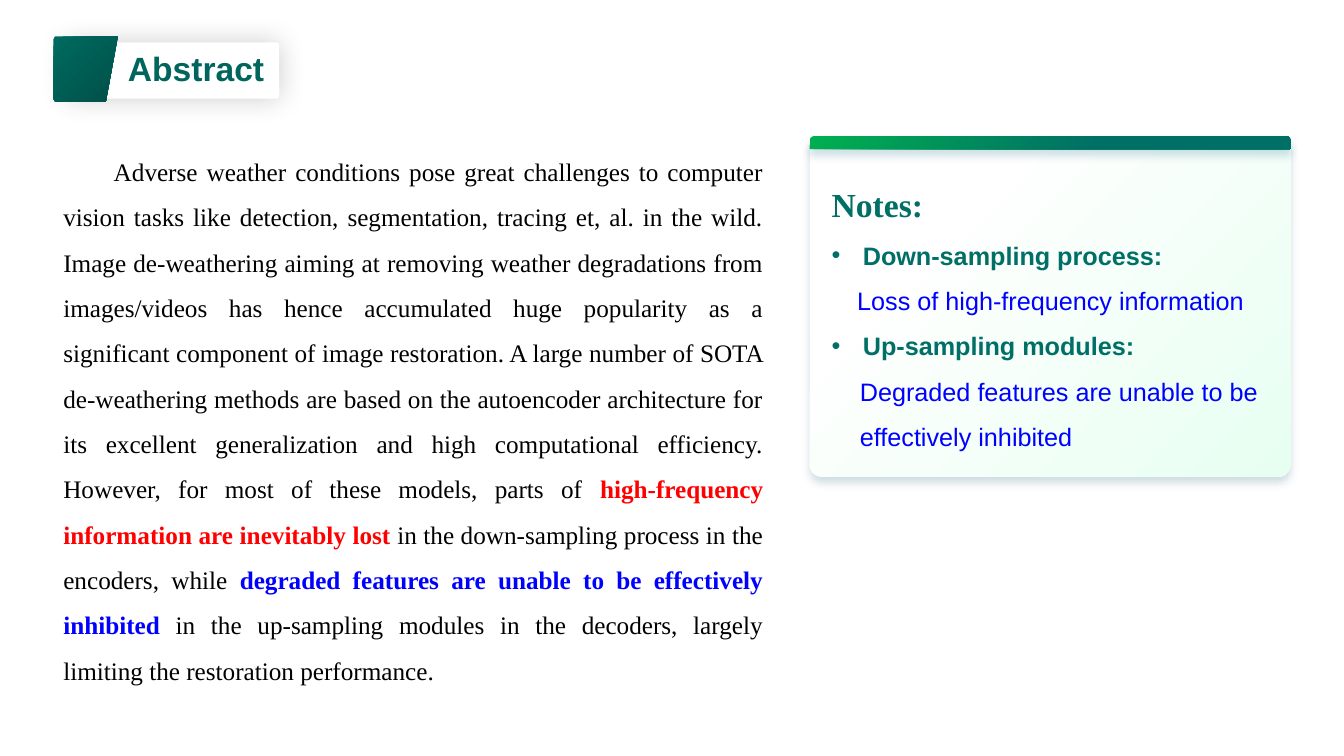
"""Build the Abstract slide with its running text and notes card."""
from dataclasses import dataclass
from typing import Any, Optional

from lxml.etree import SubElement
from pptx import Presentation
from pptx.dml.color import RGBColor
from pptx.enum.shapes import MSO_SHAPE as Preset
from pptx.enum.text import MSO_AUTO_SIZE as AutoSize, PP_ALIGN as Align
from pptx.oxml.ns import qn
from pptx.util import Emu, Pt

PX = 9144


@dataclass(frozen=True)
class Theme:
    black: str = "000000"
    white: str = "FFFFFF"
    red: str = "FF0000"
    blue: str = "0000FF"
    title: str = "00655C"
    teal: str = "006F66"
    tab_start: str = "006A60"
    tab_end: str = "005048"
    bar_start: str = "00B050"
    mint: str = "E7FFF1"
    card_shadow: str = "0F526C"
    bar_shadow: str = "116584"
    sans: str = "Arial"
    serif: str = "Times New Roman"
    heading: int = 24
    body: int = 18


THEME = Theme()


@dataclass(frozen=True)
class Rect:
    left: int
    top: int
    width: int
    height: int

    def emu(self) -> list[Emu]:
        return [Emu(n * PX) for n in (self.left, self.top, self.width, self.height)]


@dataclass(frozen=True)
class Stop:
    position: float
    color: str


@dataclass(frozen=True)
class Shadow:
    color: str
    blur: int
    distance: int
    angle: int = 90
    opacity: int = 20


@dataclass(frozen=True)
class Panel:
    preset: Preset
    rect: Rect
    adjust: tuple[float, ...]
    stops: tuple[Stop, ...]
    shadow: Shadow


@dataclass(frozen=True)
class Span:
    text: str
    color: str
    bold: bool = False
    font: str = THEME.sans
    size: int = THEME.body


@dataclass(frozen=True)
class Para:
    spans: tuple[Span, ...]
    align: Optional[Align] = None
    margin: int = 0
    indent: int = 0
    bullet: str = ""
    spacing: float = 1.5


@dataclass(frozen=True)
class TextBlock:
    rect: Rect
    paras: tuple[Para, ...]


def paint(shape: Any, stops: tuple[Stop, ...]) -> None:
    """Fill a shape with one colour or a diagonal gradient and drop its outline."""
    shape.shadow.inherit = False
    shape.line.fill.background()
    if len(stops) == 1:
        shape.fill.solid()
        shape.fill.fore_color.rgb = RGBColor.from_string(stops[0].color)
        return
    shape.fill.gradient()
    shape.fill.gradient_angle = 315
    for target, stop in zip(shape.fill.gradient_stops, stops):
        target.position = stop.position
        target.color.rgb = RGBColor.from_string(stop.color)


def add_shadow(shape: Any, shadow: Shadow) -> None:
    effects = shape._element.spPr.find(qn("a:effectLst"))
    outer = SubElement(effects, qn("a:outerShdw"), {
        "blurRad": str(Pt(shadow.blur)), "dist": str(Pt(shadow.distance)),
        "dir": str(shadow.angle * 60000), "algn": "ctr", "rotWithShape": "0"})
    color = SubElement(outer, qn("a:srgbClr"), val=shadow.color)
    SubElement(color, qn("a:alpha"), val=str(shadow.opacity * 1000))


def draw_panel(group: Any, panel: Panel) -> None:
    shape = group.shapes.add_shape(panel.preset, *panel.rect.emu())
    for index, value in enumerate(panel.adjust):
        shape.adjustments[index] = value
    paint(shape, panel.stops)
    add_shadow(shape, panel.shadow)


def draw_tab(group: Any, points: list[tuple[int, int]], stops: tuple[Stop, ...]) -> None:
    builder = group.shapes.build_freeform(*points[0], scale=PX)
    builder.add_line_segments(points[1:], close=True)
    paint(builder.convert_to_shape(), stops)


def fill_paragraph(paragraph: Any, para: Para) -> None:
    properties = paragraph._p.get_or_add_pPr()
    properties.set("marL", str(para.margin * PX))
    properties.set("indent", str(para.indent * PX))
    if para.bullet:
        SubElement(properties, qn("a:buFont"), typeface=THEME.sans)
        SubElement(properties, qn("a:buChar"), char=para.bullet)
    for name, value in {"alignment": para.align, "line_spacing": para.spacing}.items():
        setattr(paragraph, name, value)
    for span in para.spans:
        run = paragraph.add_run()
        run.text = span.text
        for name, value in {"name": span.font, "size": Pt(span.size), "bold": span.bold}.items():
            setattr(run.font, name, value)
        run.font.color.rgb = RGBColor.from_string(span.color)


def draw_text(page: Any, block: TextBlock) -> None:
    frame = page.shapes.add_textbox(*block.rect.emu()).text_frame
    for name, value in {"word_wrap": True, "auto_size": AutoSize.SHAPE_TO_FIT_TEXT}.items():
        setattr(frame, name, value)
    for index, para in enumerate(block.paras):
        fill_paragraph(frame.add_paragraph() if index else frame.paragraphs[0], para)


TITLE_PLATE = Panel(Preset.ROUNDED_RECTANGLE, Rect(66, 42, 211, 56), (0.057,),
                    (Stop(0, THEME.white),), Shadow(THEME.black, 20, 0, 0))
TAB_POINTS = [(55, 36), (117, 36), (105, 101), (55, 101), (54, 100),
              (53, 98), (53, 39), (54, 37)]
TAB_STOPS = (Stop(0, THEME.tab_start), Stop(1, THEME.tab_end))
NOTES_PANELS = (
    Panel(Preset.ROUNDED_RECTANGLE, Rect(803, 135, 477, 338), (0.036,),
          (Stop(0.25, THEME.white), Stop(1, THEME.mint)), Shadow(THEME.card_shadow, 6, 4)),
    Panel(Preset.ROUND_2_SAME_RECTANGLE, Rect(803, 135, 477, 13), (0.349, 0),
          (Stop(0, THEME.bar_start), Stop(0.6, THEME.teal)), Shadow(THEME.bar_shadow, 6, 4)),
)
ABSTRACT = (
    Span("Adverse weather conditions pose great challenges to computer vision tasks like "
         "detection, segmentation, tracing et, al. in the wild. Image de-weathering aiming at "
         "removing weather degradations from images/videos has hence accumulated huge "
         "popularity as a significant component of image restoration. A large number of SOTA "
         "de-weathering methods are based on the autoencoder architecture for its excellent "
         "generalization and high computational efficiency. However, for most of these models, "
         "parts of ", THEME.black, font=THEME.serif),
    Span("high-frequency information are inevitably lost ", THEME.red, True, THEME.serif),
    Span("in the down-sampling process in the encoders, while ", THEME.black, font=THEME.serif),
    Span("degraded features are unable to be effectively inhibited", THEME.blue, True,
         THEME.serif),
    Span(" in the up-sampling modules in the decoders, largely limiting the restoration "
         "performance.", THEME.black, font=THEME.serif),
)
NOTES = (
    Para((Span("Notes:", THEME.teal, True, THEME.serif, THEME.heading),), Align.JUSTIFY),
    Para((Span("Down-sampling process:", THEME.teal, True),), Align.JUSTIFY, 31, -31, "•"),
    Para((Span("Loss of high-frequency information", THEME.blue),), Align.CENTER),
    Para((Span("Up-sampling modules:", THEME.teal, True),), None, 31, -31, "•"),
    Para((Span("Degraded features are unable to be effectively inhibited", THEME.blue),),
         margin=28),
)
TEXT_BLOCKS = (
    TextBlock(Rect(117, 43, 160, 50), (
        Para((Span("Abstract", THEME.title, True, size=THEME.heading),), spacing=1.0),)),
    TextBlock(Rect(53, 135, 714, 550), (Para(ABSTRACT, Align.JUSTIFY, indent=50),)),
    TextBlock(Rect(815, 158, 454, 292), NOTES),
)


def main() -> None:
    deck = Presentation()
    deck.slide_width, deck.slide_height = Emu(1333 * PX), Emu(750 * PX)
    page = deck.slides.add_slide(deck.slide_layouts[6])
    title_group = page.shapes.add_group_shape()
    draw_panel(title_group, TITLE_PLATE)
    draw_tab(title_group, TAB_POINTS, TAB_STOPS)
    notes_group = page.shapes.add_group_shape()
    for panel in NOTES_PANELS:
        draw_panel(notes_group, panel)
    for block in TEXT_BLOCKS:
        draw_text(page, block)
    deck.save("out.pptx")


if __name__ == "__main__":
    main()
